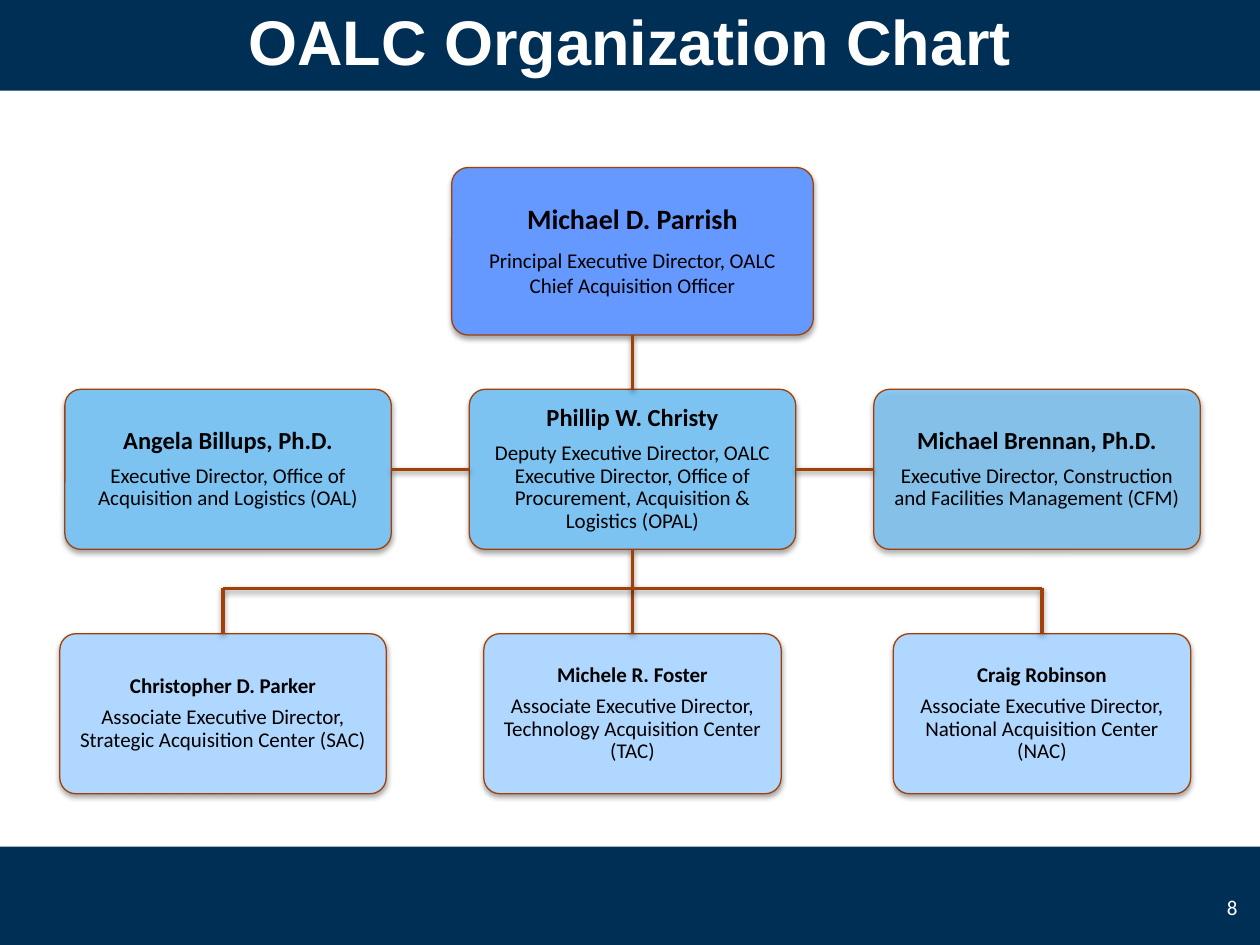
from lxml import etree
from pptx import Presentation
from pptx.dml.color import RGBColor
from pptx.enum.shapes import MSO_CONNECTOR, MSO_SHAPE
from pptx.enum.text import MSO_ANCHOR, PP_ALIGN
from pptx.oxml.ns import qn
from pptx.util import Inches, Pt

RECTANGLE = MSO_SHAPE.RECTANGLE
ROUNDED = MSO_SHAPE.ROUNDED_RECTANGLE
STRAIGHT = MSO_CONNECTOR.STRAIGHT
MIDDLE = MSO_ANCHOR.MIDDLE
CENTER, RIGHT = PP_ALIGN.CENTER, PP_ALIGN.RIGHT
TOP_SIDE, LEFT_SIDE, BOTTOM_SIDE, RIGHT_SIDE = range(4)

NAVY, RUST, WHITE, BLACK = "002F56", "A14108", "FFFFFF", "000000"
AXIS = 5.02            # vertical axis of the chart
CARD_HEIGHT = 1.27
BUS_Y = 4.67


def color(value):
    return RGBColor.from_string(value)


def add_shadow(shape, opacity, distance):
    properties = shape._element.spPr
    for old in properties.findall(qn("a:effectLst")):
        properties.remove(old)
    effects = etree.SubElement(properties, qn("a:effectLst"))
    shadow = etree.SubElement(
        effects, qn("a:outerShdw"), blurRad=str(Pt(3.1)), dist=str(Pt(distance)),
        dir="5400000", rotWithShape="0")
    black = etree.SubElement(shadow, qn("a:srgbClr"), val=BLACK)
    etree.SubElement(black, qn("a:alpha"), val=str(opacity * 1000))


def add_run(paragraph, text, size, font, fill, bold=False):
    run = paragraph.add_run()
    run.text = text
    run.font.size = Pt(size)
    run.font.name = font
    run.font.bold = bold
    run.font.color.rgb = color(fill)


def add_band(slide, left, top, width, height):
    band = slide.shapes.add_shape(
        RECTANGLE, Inches(left), Inches(top), Inches(width), Inches(height))
    band.shadow.inherit = False
    band.fill.solid()
    band.fill.fore_color.rgb = color(NAVY)
    band.line.fill.background()


def add_label(slide, left, top, width, height, text, size, font, align, bold=False):
    box = slide.shapes.add_textbox(
        Inches(left), Inches(top), Inches(width), Inches(height))
    frame = box.text_frame
    frame.word_wrap = True
    frame.vertical_anchor = MIDDLE
    paragraph = frame.paragraphs[0]
    paragraph.alignment = align
    add_run(paragraph, text, size, font, WHITE, bold)


def add_card(slide, center, top, width, height, fill, name, name_size, roles,
             opacity=100, role_spacing=0.9, role_gap=5):
    card = slide.shapes.add_shape(
        ROUNDED, Inches(center - width / 2), Inches(top), Inches(width), Inches(height))
    card.adjustments[0] = 0.1
    card.fill.solid()
    card.fill.fore_color.rgb = color(fill)
    if opacity < 100:
        fill_color = card._element.spPr.find(qn("a:solidFill"))[0]
        etree.SubElement(fill_color, qn("a:alpha"), val=str(opacity * 1000))
    card.line.color.rgb = color(RUST)
    card.line.width = Pt(0.75)
    add_shadow(card, 35, 1.8)

    frame = card.text_frame
    frame.word_wrap = True
    frame.vertical_anchor = MIDDLE
    frame.margin_left = frame.margin_right = Inches(0.05)
    frame.margin_top = frame.margin_bottom = Inches(0.05)
    heading = frame.paragraphs[0]
    heading.alignment = CENTER
    heading.line_spacing = 0.9
    heading.space_after = Pt(round(name_size * 0.42, 1))
    add_run(heading, name, name_size, "Calibri", BLACK, True)
    for role in roles:
        paragraph = frame.add_paragraph()
        paragraph.alignment = CENTER
        paragraph.line_spacing = role_spacing
        paragraph.space_after = Pt(role_gap)
        add_run(paragraph, role, 12, "Calibri", BLACK)
    return card


def add_link(slide, start=(0, 0), end=(0, 0), begin_card=None, end_card=None):
    """Draw a line between points; a (card, side) pair overrides its point."""
    link = slide.shapes.add_connector(
        STRAIGHT, *[Inches(value) for value in (*start, *end)])
    if begin_card:
        link.begin_connect(*begin_card)
    if end_card:
        link.end_connect(*end_card)
    link.line.color.rgb = color(RUST)
    link.line.width = Pt(2)
    add_shadow(link, 38, 1.6)


def add_chart_tree(slide):
    # Top: principal director
    principal = add_card(
        slide, AXIS, 1.33, 2.87, 1.33, "6699FF", "Michael D. Parrish", 16,
        ["Principal Executive Director, OALC", "Chief Acquisition Officer"],
        role_spacing=1.0, role_gap=0)

    # Middle row: executive directors
    middle = [
        (-3.21, "Angela Billups, Ph.D.",
         "Executive Director, Office of Acquisition and Logistics (OAL)", 100),
        (0, "Phillip W. Christy",
         "Deputy Executive Director, OALC Executive Director, Office of "
         "Procurement, Acquisition & Logistics (OPAL)", 100),
        (3.21, "Michael Brennan, Ph.D.",
         "Executive Director, Construction and Facilities Management (CFM)", 84),
    ]
    logistics, deputy, facilities = [
        add_card(slide, AXIS + offset, 3.09, 2.59, CARD_HEIGHT, "7CC3F2",
                 name, 14, [role], opacity)
        for offset, name, role, opacity in middle]

    # Bottom row: associate directors
    bottom = [
        (-3.25, 2.59, "Christopher D. Parker",
         "Associate Executive Director, Strategic Acquisition Center (SAC)", 0),
        (0, 2.36, "Michele R. Foster",
         "Associate Executive Director, Technology Acquisition Center (TAC)", 5),
        (3.25, 2.36, "Craig Robinson",
         "Associate Executive Director, National Acquisition Center (NAC)", 5),
    ]
    strategic, technology, national = [
        add_card(slide, AXIS + offset, 5.03, width, CARD_HEIGHT, "B0D7FF",
                 name, 12, [role], role_gap=gap)
        for offset, width, name, role, gap in bottom]

    # Links between cards
    for begin_card, end_card in [
        ((principal, BOTTOM_SIDE), (deputy, TOP_SIDE)),
        ((deputy, BOTTOM_SIDE), (technology, TOP_SIDE)),
        ((logistics, RIGHT_SIDE), (deputy, LEFT_SIDE)),
        ((deputy, RIGHT_SIDE), (facilities, LEFT_SIDE)),
    ]:
        add_link(slide, begin_card=begin_card, end_card=end_card)

    # Horizontal bus and its two drops
    bus_left, bus_right = (AXIS - 3.25, BUS_Y), (AXIS + 3.25, BUS_Y)
    add_link(slide, bus_left, bus_right)
    add_link(slide, bus_left, end_card=(strategic, TOP_SIDE))
    add_link(slide, bus_right, end_card=(national, TOP_SIDE))


def main():
    presentation = Presentation()
    presentation.slide_width = Inches(10)
    presentation.slide_height = Inches(7.5)
    slide = presentation.slides.add_slide(presentation.slide_layouts[6])

    # Footer and header bands, page number
    add_band(slide, 0, 6.72, 10, 0.8)
    add_band(slide, 0, -0.08, 10, 0.8)
    add_label(slide, 9.5, 7, 0.42, 0.4, "8", 12, "Calibri", RIGHT)

    add_chart_tree(slide)

    # Title
    add_label(slide, 0, -0.08, 10, 0.8, "OALC Organization Chart", 36, "Arial",
              CENTER, True)
    presentation.save("out.pptx")


if __name__ == "__main__":
    main()
